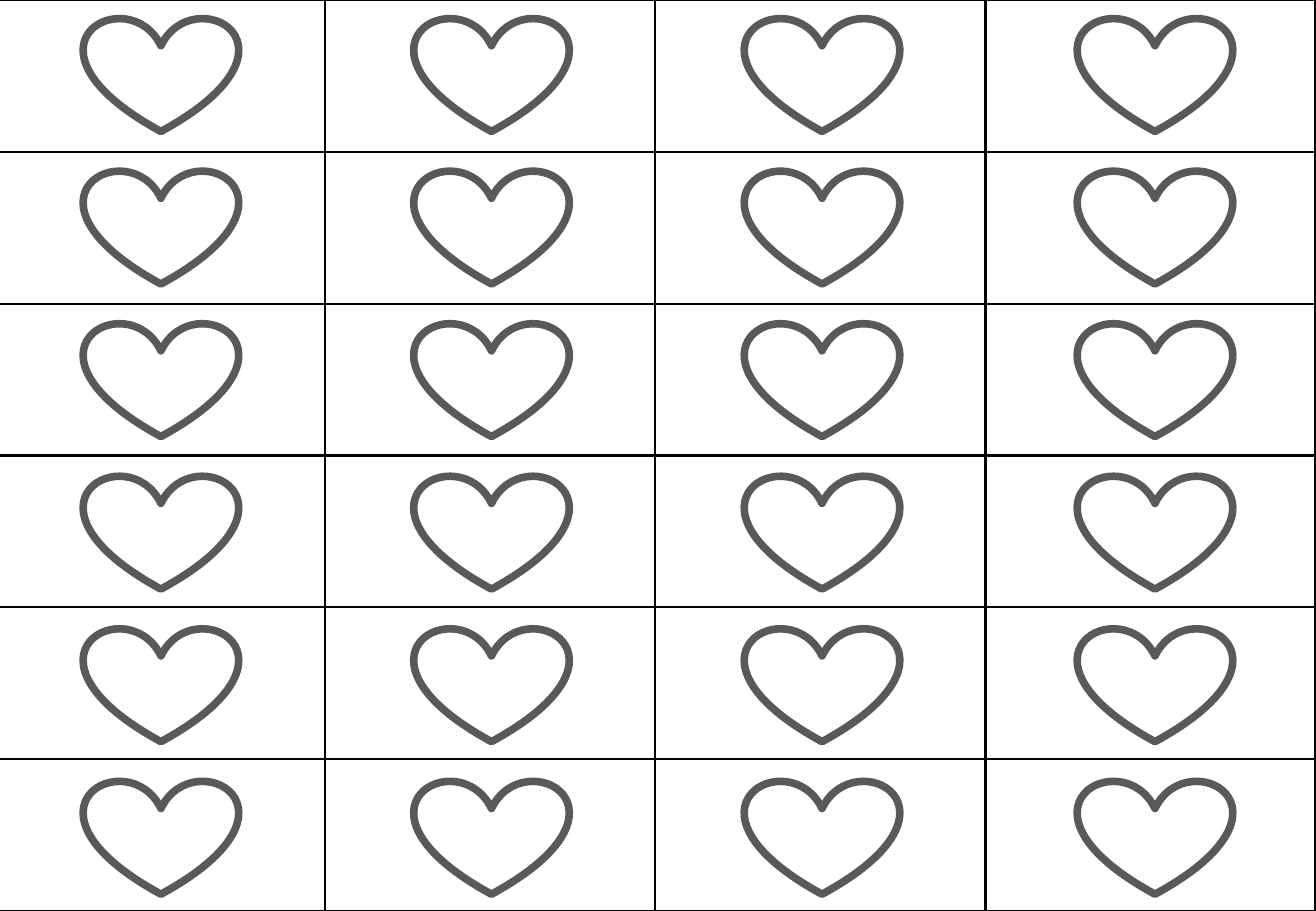
from dataclasses import dataclass
from itertools import product

from lxml.etree import SubElement
from pptx import Presentation
from pptx.dml.color import RGBColor
from pptx.enum.shapes import MSO_SHAPE
from pptx.oxml.ns import qn
from pptx.slide import Slide
from pptx.table import _Cell
from pptx.util import Cm, Pt

WHITE = RGBColor(0xFF, 0xFF, 0xFF)
BLACK = RGBColor(0x00, 0x00, 0x00)
GREY = RGBColor(0x59, 0x59, 0x59)

ROWS, COLUMNS = 6, 4
PAGE_WIDTH, PAGE_HEIGHT = 27.51, 19.05
TABLE_LEFT = -0.1
COLUMN_WIDTH, ROW_HEIGHT = 6.9, PAGE_HEIGHT / ROWS
HEART_WIDTH, HEART_HEIGHT = 3.23, 2.39
HEART_LEFTS = (1.75, 8.66, 15.57, 22.53)
FIRST_HEART_TOP, HEART_PITCH = 0.36, 3.19


@dataclass(frozen=True)
class Heart:
    left: float
    top: float


def style_cell(cell: _Cell) -> None:
    """Give the cell a white fill and black borders on all sides."""
    properties = cell._tc.get_or_add_tcPr()
    for side in ("lnL", "lnR", "lnT", "lnB"):
        border = SubElement(properties, qn(f"a:{side}"), w=str(Pt(1.5)))
        border_fill = SubElement(border, qn("a:solidFill"))
        SubElement(border_fill, qn("a:srgbClr"), val=str(BLACK))
    cell.fill.solid()
    cell.fill.fore_color.rgb = WHITE


def add_grid(page: Slide) -> None:
    frame = page.shapes.add_table(
        ROWS, COLUMNS, Cm(TABLE_LEFT), Cm(0),
        Cm(COLUMN_WIDTH * COLUMNS), Cm(PAGE_HEIGHT),
    )
    table = frame.table
    table.first_row = table.horz_banding = False
    for column in table.columns:
        column.width = Cm(COLUMN_WIDTH)
    for row in table.rows:
        row.height = Cm(ROW_HEIGHT)
    for cell in table.iter_cells():
        style_cell(cell)


def add_heart(page: Slide, heart: Heart) -> None:
    shape = page.shapes.add_shape(
        MSO_SHAPE.HEART, Cm(heart.left), Cm(heart.top),
        Cm(HEART_WIDTH), Cm(HEART_HEIGHT),
    )
    shape.shadow.inherit = False
    shape.fill.solid()
    shape.fill.fore_color.rgb = WHITE
    shape.line.color.rgb = GREY
    shape.line.width = Pt(4.5)


def main() -> None:
    deck = Presentation()
    deck.slide_width, deck.slide_height = Cm(PAGE_WIDTH), Cm(PAGE_HEIGHT)
    page = deck.slides.add_slide(deck.slide_layouts.get_by_name("Blank"))
    add_grid(page)
    for row, left in product(range(ROWS), HEART_LEFTS):
        add_heart(page, Heart(left, FIRST_HEART_TOP + row * HEART_PITCH))
    deck.save("out.pptx")


if __name__ == "__main__":
    main()
